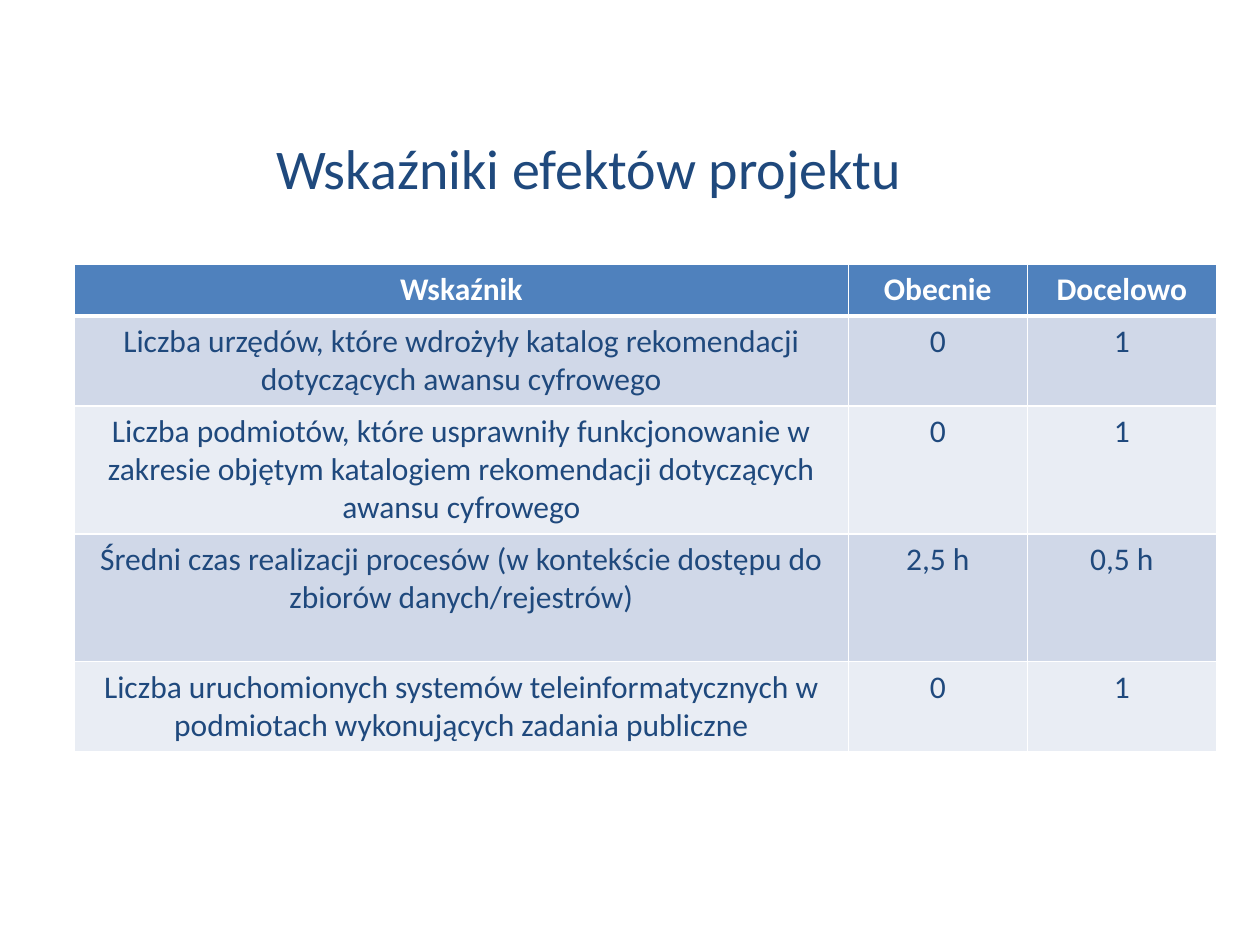
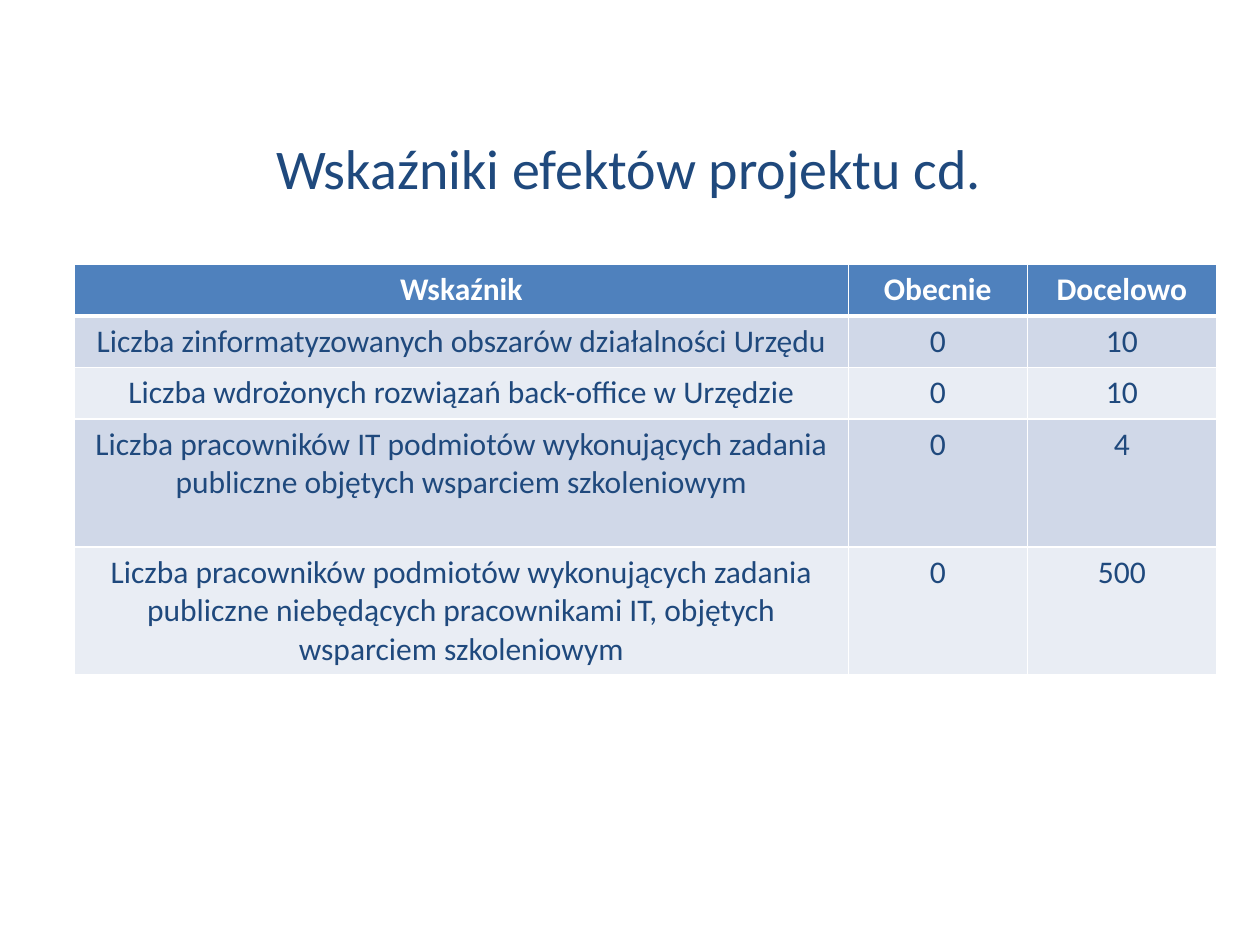
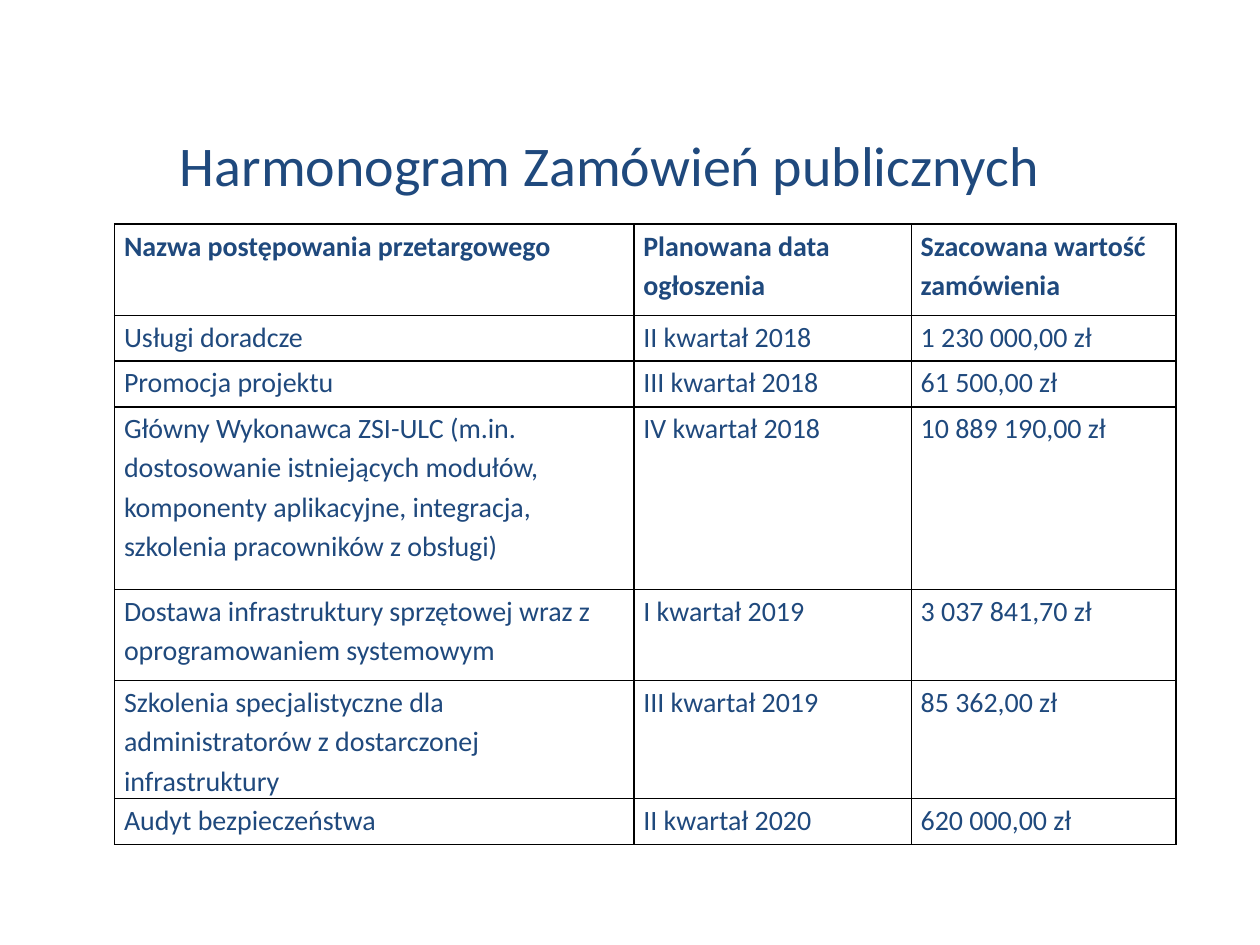
from lxml import etree
from pptx import Presentation
from pptx.dml.color import RGBColor
from pptx.enum.text import MSO_ANCHOR, MSO_AUTO_SIZE, PP_ALIGN
from pptx.oxml.ns import qn
from pptx.util import Cm, Pt

LEFT = PP_ALIGN.LEFT
CENTER = PP_ALIGN.CENTER
TOP = MSO_ANCHOR.TOP
NO_AUTOFIT = MSO_AUTO_SIZE.NONE

NAVY = RGBColor(0x1F, 0x49, 0x7D)
BLUE = RGBColor(0x4F, 0x81, 0xBD)
BAND_DARK = RGBColor(0xD0, 0xD8, 0xE8)
BAND_LIGHT = RGBColor(0xE9, 0xED, 0xF4)
WHITE = RGBColor(0xFF, 0xFF, 0xFF)
BLACK = RGBColor(0x00, 0x00, 0x00)

TITLE_ONLY_LAYOUT = 5
INDICATOR_HEADER = ("Wskaźnik", "Obecnie", "Docelowo")

# Each table row ends with the number of text lines its height allows for.
EFFECTS = [
    ("Liczba urzędów, które wdrożyły katalog rekomendacji dotyczących awansu cyfrowego", "0", "1", 2),
    ("Liczba podmiotów, które usprawniły funkcjonowanie w zakresie objętym katalogiem "
     "rekomendacji dotyczących awansu cyfrowego", "0", "1", 3),
    ("Średni czas realizacji procesów (w kontekście dostępu do zbiorów danych/rejestrów)",
     "2,5 h", "0,5 h", 3),
    ("Liczba uruchomionych systemów teleinformatycznych w podmiotach wykonujących "
     "zadania publiczne", "0", "1", 2),
]
MORE_EFFECTS = [
    ("Liczba zinformatyzowanych obszarów działalności Urzędu", "0", "10", 1),
    ("Liczba wdrożonych rozwiązań back-office w Urzędzie", "0", "10", 1),
    ("Liczba pracowników IT podmiotów wykonujących zadania publiczne objętych "
     "wsparciem szkoleniowym", "0", "4", 3),
    ("Liczba pracowników podmiotów wykonujących zadania publiczne niebędących "
     "pracownikami IT, objętych wsparciem szkoleniowym", "0", "500", 3),
]
TENDERS = [
    ("Nazwa postępowania przetargowego", "Planowana data ogłoszenia", "Szacowana wartość zamówienia", 2),
    ("Usługi doradcze", "II kwartał 2018", "1 230 000,00 zł", 1),
    ("Promocja projektu", "III kwartał 2018", "61 500,00 zł", 1),
    ("Główny Wykonawca ZSI-ULC (m.in. dostosowanie istniejących modułów, komponenty "
     "aplikacyjne, integracja, szkolenia pracowników z obsługi)",
     "IV kwartał 2018", "10 889 190,00 zł", 4),
    ("Dostawa infrastruktury sprzętowej wraz z oprogramowaniem systemowym",
     "I kwartał 2019", "3 037 841,70 zł", 2),
    ("Szkolenia specjalistyczne dla administratorów z dostarczonej infrastruktury",
     "III kwartał 2019", "85 362,00 zł", 2.5),
    ("Audyt bezpieczeństwa", "II kwartał 2020", "620 000,00 zł", 1),
]


class Deck:
    """Holds the shared style and the slide being built."""

    font_name = "Calibri"

    def __init__(self):
        self.presentation = Presentation()
        self.presentation.slide_width = Cm(25.4)
        self.presentation.slide_height = Cm(19.05)
        self.slide = None

    def add_slide(self):
        layout = self.presentation.slide_layouts[TITLE_ONLY_LAYOUT]
        self.slide = self.presentation.slides.add_slide(layout)

    def style(self, paragraph, size, color, alignment, bold=False):
        paragraph.alignment = alignment
        paragraph.font.name = self.font_name
        paragraph.font.size = Pt(size)
        paragraph.font.color.rgb = color
        paragraph.font.bold = bold

    def title(self, text, left, top, width, alignment=LEFT, wrap=False):
        shape = self.slide.shapes.title
        shape.left, shape.top = Cm(left), Cm(top)
        shape.width, shape.height = Cm(width), Cm(1.62)
        frame = shape.text_frame
        frame.text = text
        frame.auto_size = NO_AUTOFIT
        frame.word_wrap = wrap
        frame.vertical_anchor = TOP
        self.style(frame.paragraphs[0], 32, NAVY, alignment)

    def table(self, left, top, widths, heights):
        shape = self.slide.shapes.add_table(
            len(heights), len(widths), Cm(left), Cm(top), Cm(sum(widths)), Cm(sum(heights)))
        table = shape.table
        for column, width in zip(table.columns, widths):
            column.width = Cm(width)
        for row, height in zip(table.rows, heights):
            row.height = Cm(height)
        return table

    def borders(self, cell, color, top=1, bottom=1):
        properties = cell._tc.get_or_add_tcPr()
        for edge, points in (("L", 1), ("R", 1), ("T", top), ("B", bottom)):
            line = etree.SubElement(properties, qn(f"a:ln{edge}"), w=str(Pt(points)))
            fill = etree.SubElement(line, qn("a:solidFill"))
            etree.SubElement(fill, qn("a:srgbClr"), val=str(color))

    def indicator_table(self, indicators):
        rows = [(*INDICATOR_HEADER, 1), *indicators]
        heights = [0.27 + 0.77 * row[-1] for row in rows]
        table = self.table(1.5, 5.33, (15.6, 3.61, 3.81), heights)
        for row_index, (*texts, _) in enumerate(rows):
            header = row_index == 0
            band = BAND_DARK if row_index % 2 else BAND_LIGHT
            for column_index, text in enumerate(texts):
                cell = table.cell(row_index, column_index)
                cell.text = text
                self.borders(cell, WHITE, top=3 if row_index == 1 else 1, bottom=3 if header else 1)
                cell.fill.solid()
                cell.fill.fore_color.rgb = BLUE if header else band
                self.style(cell.text_frame.paragraphs[0], 18, WHITE if header else NAVY, CENTER, header)

    def tender_table(self, rows):
        heights = [0.92 * row[-1] for row in rows]
        table = self.table(2.31, 4.52, (10.47, 5.59, 5.34), heights)
        for row_index, (*texts, _) in enumerate(rows):
            for column_index, text in enumerate(texts):
                cell = table.cell(row_index, column_index)
                cell.text = text
                cell.margin_left = cell.margin_right = Cm(0.19)
                cell.margin_top = cell.margin_bottom = 0
                self.borders(cell, BLACK)
                cell.fill.background()
                paragraph = cell.text_frame.paragraphs[0]
                paragraph.line_spacing = 1.15
                self.style(paragraph, 16, NAVY, LEFT, row_index == 0)


def main():
    deck = Deck()
    for title, width, indicators in (
        ("Wskaźniki efektów projektu", 13.23, EFFECTS),
        ("Wskaźniki efektów projektu cd.", 14.86, MORE_EFFECTS),
    ):
        deck.add_slide()
        deck.title(title, 5.31, 2.57, width)
        deck.indicator_table(indicators)

    deck.add_slide()
    deck.title("Harmonogram Zamówień publicznych", 3.1, 2.51, 18.39, CENTER, wrap=True)
    deck.tender_table(TENDERS)
    deck.presentation.save("out.pptx")


if __name__ == "__main__":
    main()
